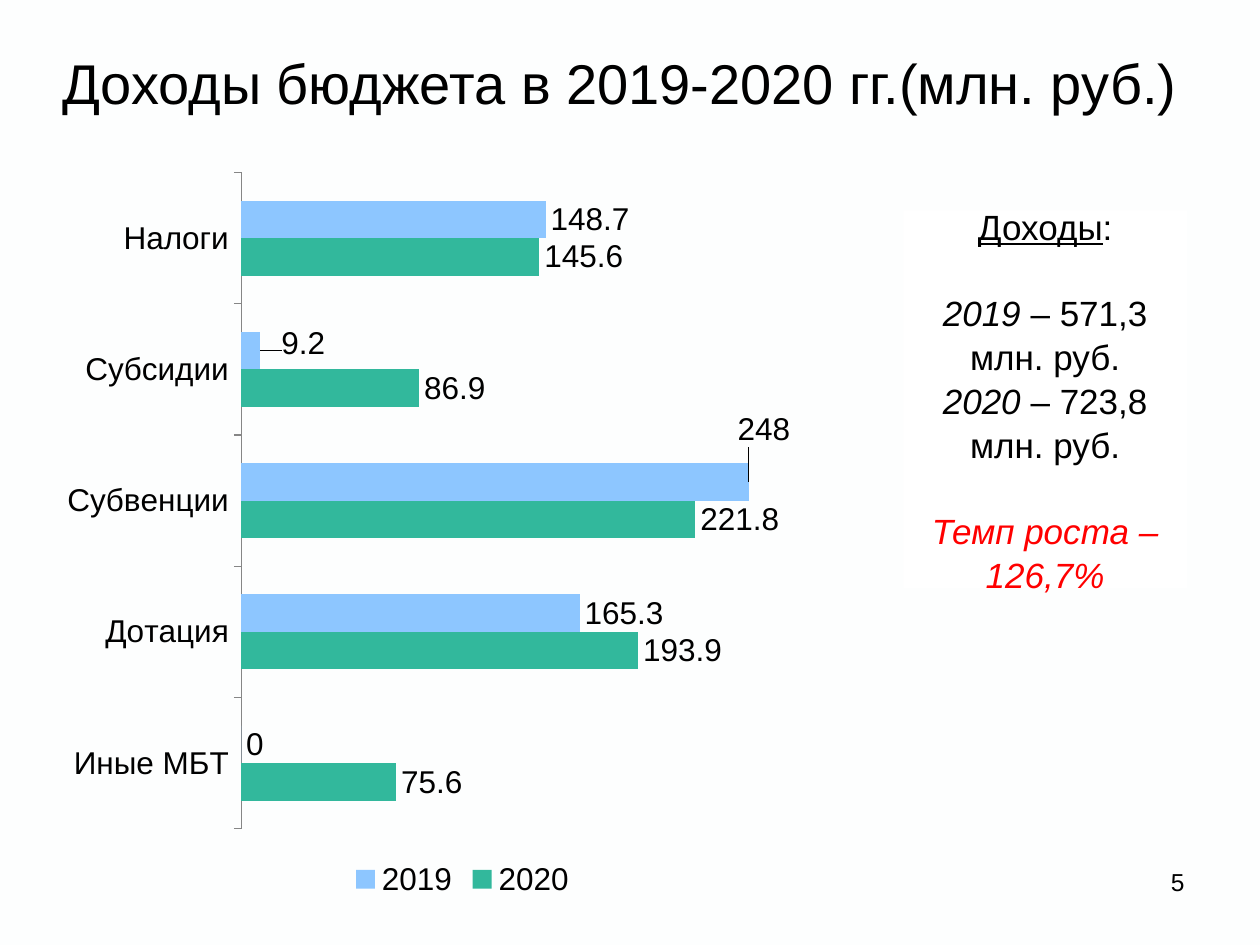
from lxml import etree
from pptx import Presentation
from pptx.chart.data import CategoryChartData
from pptx.dml.color import RGBColor
from pptx.enum.chart import XL_CHART_TYPE, XL_LABEL_POSITION, XL_LEGEND_POSITION, XL_TICK_MARK
from pptx.enum.shapes import MSO_SHAPE
from pptx.enum.text import MSO_ANCHOR, PP_ALIGN
from pptx.oxml.ns import qn
from pptx.util import Inches, Pt

BLACK = RGBColor(0x00, 0x00, 0x00)
WHITE = RGBColor(0xFF, 0xFF, 0xFF)
RED = RGBColor(0xFF, 0x00, 0x00)
GRAY = RGBColor(0x86, 0x86, 0x86)
GREEN = RGBColor(0x32, 0xB8, 0x9C)
BLUE = RGBColor(0x8D, 0xC6, 0xFF)
PAPER = RGBColor(0xFD, 0xFE, 0xFE)
CENTER, RIGHT = PP_ALIGN.CENTER, PP_ALIGN.RIGHT
MIDDLE, TOP = MSO_ANCHOR.MIDDLE, MSO_ANCHOR.TOP
RECTANGLE = MSO_SHAPE.RECTANGLE
BAR_CLUSTERED = XL_CHART_TYPE.BAR_CLUSTERED
OUTSIDE_END = XL_LABEL_POSITION.OUTSIDE_END
LEGEND_BOTTOM = XL_LEGEND_POSITION.BOTTOM
TICK_OUTSIDE = XL_TICK_MARK.OUTSIDE
TITLE_ONLY = 5


class BudgetSlide:
    """Holds the text style and the current slide, and draws its elements."""

    def __init__(self, presentation, font="Arial"):
        self.font = font
        self.slide = presentation.slides.add_slide(presentation.slide_layouts[TITLE_ONLY])
        fill = self.slide.background.fill
        fill.solid()
        fill.fore_color.rgb = PAPER

    def style(self, font, size, color=BLACK, **extras):
        for name, value in {"name": self.font, "size": Pt(size), **extras}.items():
            setattr(font, name, value)
        font.color.rgb = color

    def fill_text(self, frame, paragraphs, size, align=CENTER, anchor=MIDDLE):
        frame.word_wrap = True
        frame.vertical_anchor = anchor
        for number, (spacing, runs) in enumerate(paragraphs):
            paragraph = frame.add_paragraph() if number else frame.paragraphs[0]
            for name, value in {"alignment": align, **spacing}.items():
                setattr(paragraph, name, value)
            for text, extras in runs:
                run = paragraph.add_run()
                run.text = text
                self.style(run.font, size, **extras)

    def title(self, text, box, size):
        heading = self.slide.shapes.title
        for name, value in zip(("left", "top", "width", "height"), box):
            setattr(heading, name, Inches(value))
        self.fill_text(heading.text_frame, [({}, [(text, {})])], size)

    def text(self, text, box, size, align):
        label = self.slide.shapes.add_textbox(*map(Inches, box))
        self.fill_text(label.text_frame, [({}, [(text, {})])], size, align, TOP)

    def panel(self, paragraphs, box, size):
        panel = self.slide.shapes.add_shape(RECTANGLE, *map(Inches, box))
        panel.shadow.inherit = False
        panel.fill.solid()
        panel.fill.fore_color.rgb = WHITE
        panel.line.fill.background()
        self.fill_text(panel.text_frame, paragraphs, size)

    def layout(self, parent, index, **settings):
        layout = etree.Element(qn("c:layout"))
        manual = etree.SubElement(layout, qn("c:manualLayout"))
        for name, value in settings.items():
            etree.SubElement(manual, qn(f"c:{name}")).set("val", str(value))
        for existing in parent.findall(qn("c:layout")):
            parent.remove(existing)
        parent.insert(index, layout)

    def bar_chart(self, categories, series, box, size, maximum, label_shifts):
        data = CategoryChartData()
        data.categories = categories
        for name, values, _ in series:
            data.add_series(name, values)
        chart = self.slide.shapes.add_chart(BAR_CLUSTERED, *map(Inches, box), data).chart
        self.style(chart.font, size)
        chart.has_title = False
        chart.has_legend = True
        chart.legend.position = LEGEND_BOTTOM
        chart.legend.include_in_layout = False

        amounts = chart.value_axis
        for name, value in {"visible": False, "has_major_gridlines": False,
                            "minimum_scale": 0, "maximum_scale": maximum}.items():
            setattr(amounts, name, value)
        chart.category_axis.major_tick_mark = TICK_OUTSIDE
        chart.category_axis.format.line.color.rgb = GRAY

        plot = chart.plots[0]
        for name, value in {"gap_width": 150, "overlap": 0, "vary_by_categories": False}.items():
            setattr(plot, name, value)
        for bars, (name, _, color) in zip(plot.series, series):
            bars.format.fill.solid()
            bars.format.fill.fore_color.rgb = color
            bars.data_labels.show_value = True
            bars.data_labels.position = OUTSIDE_END
            self.style(bars.data_labels.font, size)
            for point, (x, y) in label_shifts.get(name, {}).items():
                label = bars.points[point].data_label
                label.position = OUTSIDE_END
                self.style(label.font, size)
                element = bars.data_labels._element.xpath(f"c:dLbl[c:idx/@val={point}]")[0]
                self.layout(element, 1, x=x, y=y)
        area = chart.plots[0]._element.getparent()
        self.layout(area, 0, layoutTarget="inner", xMode="edge", yMode="edge",
                    x=0.23, y=0.02, w=0.75, h=0.88)


def main():
    presentation = Presentation()
    presentation.slide_width, presentation.slide_height = Inches(10), Inches(7.5)
    budget = BudgetSlide(presentation)
    budget.title("Доходы бюджета в 2019-2020 гг.(млн. руб.)", (0.17, 0.3, 9.5, 0.7), 32)
    budget.bar_chart(
        ["Иные МБТ", "Дотация", "Субвенции", "Субсидии", "Налоги"],
        [("2020", (75.6, 193.9, 221.8, 86.9, 145.6), GREEN),
         ("2019", (0, 165.3, 248, 9.2, 148.7), BLUE)],
        (0.42, 1.25, 6.5, 5.92), 18, 300,
        {"2019": {2: (-0.02, -0.07), 3: (0.02, -0.01)}},
    )
    budget.text("5", (7.17, 6.83, 2.33, 0.52), 14, RIGHT)
    line = {"line_spacing": 1.05}
    after_gap = {**line, "space_before": Pt(24)}
    italic = {"italic": True}
    budget.panel([
        (line, [("Доходы", {"underline": True}), (":", {})]),
        (after_gap, [("2019", italic), (" – 571,3 млн. руб.", {})]),
        (line, [("2020", italic), (" – 723,8 млн. руб.", {})]),
        (after_gap, [("Темп роста – 126,7%", {**italic, "color": RED})]),
    ], (7.17, 1.67, 2.25, 3), 20)
    presentation.save("out.pptx")


if __name__ == "__main__":
    main()
